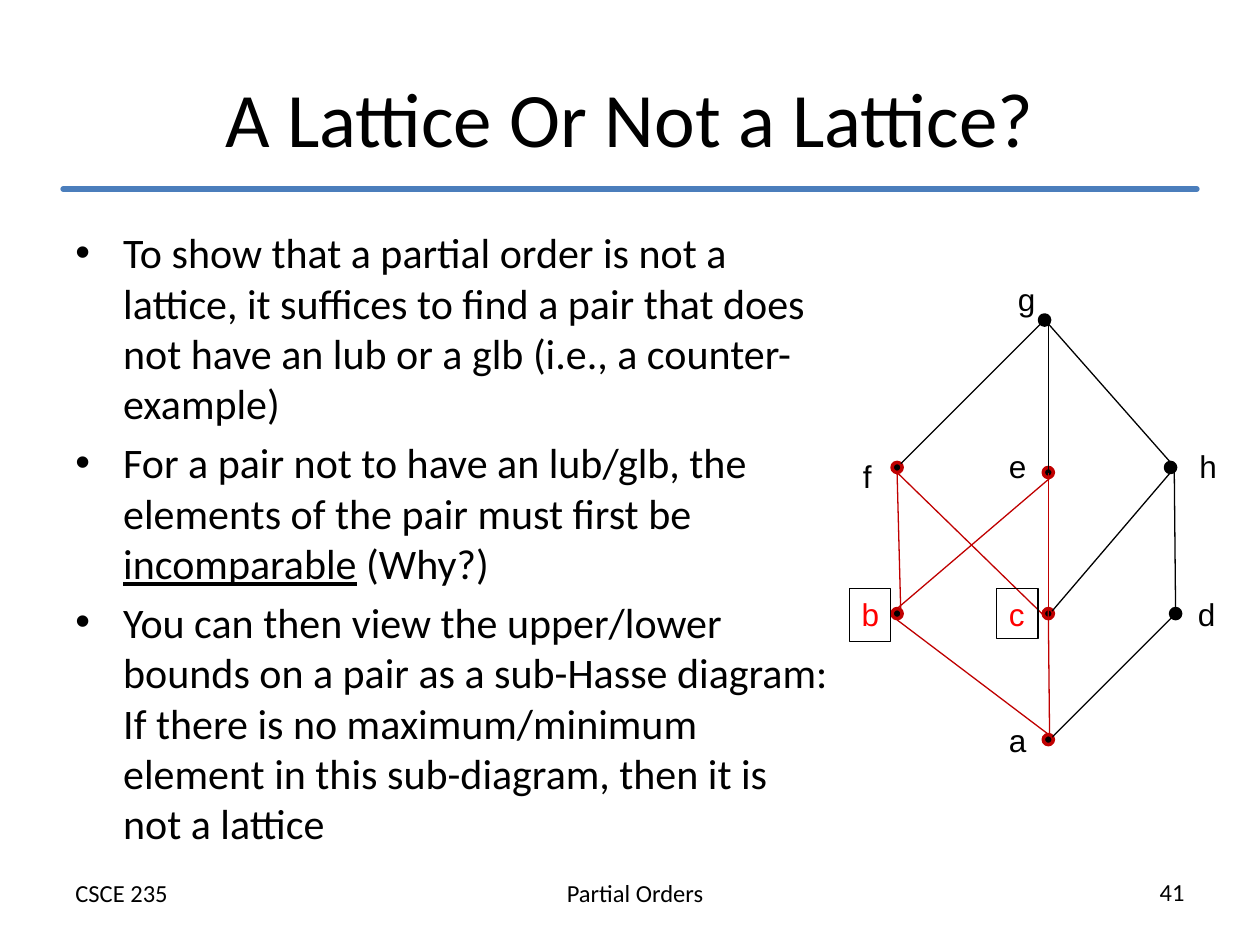
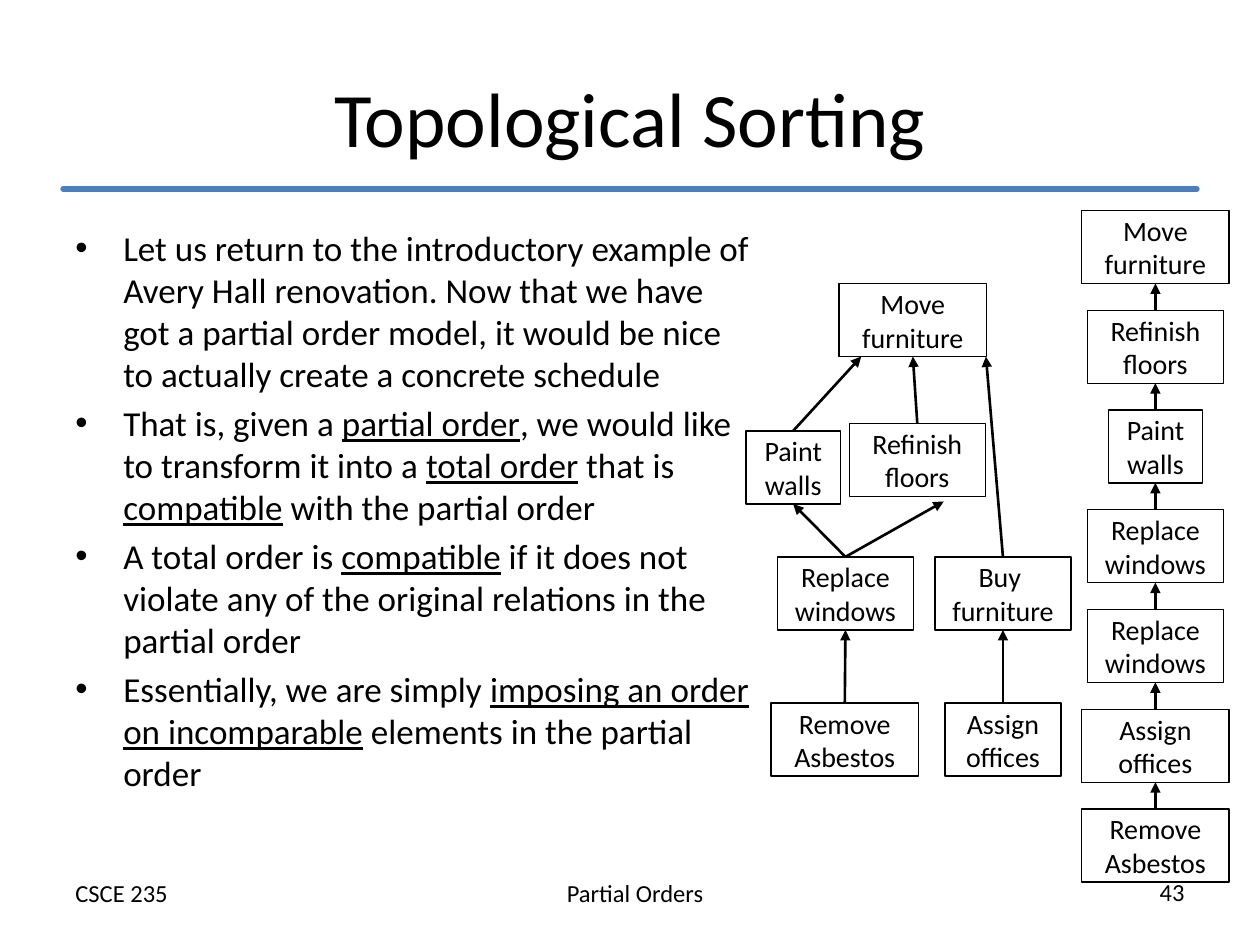
from lxml.etree import SubElement
from pptx import Presentation
from pptx.dml.color import RGBColor
from pptx.enum.shapes import MSO_CONNECTOR, MSO_SHAPE
from pptx.enum.text import MSO_ANCHOR, PP_ALIGN
from pptx.oxml.ns import qn
from pptx.util import Pt

PX = 9144  # 100 px to the inch
BLACK, RED, DARK_RED, BLUE = "000000", "FF0000", "C00000", "4B7EBC"
TASK_HEIGHT = 58

LATTICE_POINTS = [
    "To show that a partial order is not a lattice, it suffices to find a pair "
    "that does not have an lub or a glb (i.e., a counter-example)",
    "For a pair not to have an lub/glb, the elements of the pair must first be "
    "_incomparable_ (Why?)",
    "You can then view the upper/lower bounds on a pair as a sub-Hasse diagram: "
    "If there is no maximum/minimum element in this sub-diagram, then it is not a lattice",
]
SORTING_POINTS = [
    "Let us return to the introductory example of Avery Hall renovation. Now that we "
    "have got a partial order model, it would be nice to actually create a concrete schedule",
    "That is, given a _partial order_, we would like to transform it into a "
    "_total order_ that is _compatible_ with the partial order",
    "A total order is _compatible_ if it does not violate any of the original "
    "relations in the partial order",
    "Essentially, we are simply _imposing an order on incomparable_ elements "
    "in the partial order",
]

# Hasse diagram: dot left, top, outline colour
DOTS = [
    (708, 483, DARK_RED), (828, 371, DARK_RED), (929, 483, BLACK),
    (828, 483, DARK_RED), (828, 583, DARK_RED), (825, 250, BLACK),
    (708, 367, DARK_RED), (925, 367, BLACK),
]
LETTERS = [
    ("a", 791, 567, 34), ("d", 941, 467, 34), ("g", 798, 217, 34),
    ("h", 942, 350, 34), ("f", 675, 358, 27), ("e", 791, 350, 34),
]
FRAMED_LETTERS = [("b", 674, 467, 33, 42), ("c", 791, 467, 33, 40)]
BLACK_EDGES = [
    (835, 585, 930, 490), (929, 367, 832, 257), (826, 257, 715, 368),
    (832, 379, 832, 257), (933, 483, 932, 374), (835, 485, 929, 375),
]
RED_EDGES = [
    (835, 585, 712, 492), (832, 483, 832, 375), (833, 583, 832, 483),
    (715, 490, 712, 375), (712, 483, 835, 378), (828, 488, 712, 375),
]

# Partial order of tasks: left, top, width
TASKS = {
    "Remove Asbestos": (612, 558, 117),
    "Replace windows": (617, 442, 108),
    "Paint walls": (592, 342, 75),
    "Refinish floors": (674, 336, 108),
    "Move furniture": (666, 225, 117),
    "Buy \nfurniture": (742, 442, 108),
    "Assign offices": (750, 558, 92),
}
# Earlier task, later task, shift of the arrowhead from the bottom centre
PRECEDENCES = [
    ("Remove Asbestos", "Replace windows", 0, 0),
    ("Assign offices", "Buy \nfurniture", 0, 0),
    ("Refinish floors", "Move furniture", 0, 0),
    ("Replace windows", "Refinish floors", 21, 4),
    ("Replace windows", "Paint walls", 0, 0),
    ("Paint walls", "Move furniture", -41, 0),
    ("Buy \nfurniture", "Move furniture", 58, 0),
]
# Total order, last task first
SCHEDULE = [
    ("Move furniture", 117), ("Refinish floors", 108), ("Paint walls", 75),
    ("Replace windows", 108), ("Replace windows", 108),
    ("Assign offices", 117), ("Remove Asbestos", 117),
]


def color(value):
    return RGBColor.from_string(value)


def px(*lengths):
    return [round(length * PX) for length in lengths]


def style_text(box, size, ink=BLACK, font="Calibri", align=PP_ALIGN.LEFT,
               anchor=MSO_ANCHOR.TOP, wrap=True):
    frame = box.text_frame
    frame.word_wrap = wrap
    frame.vertical_anchor = anchor
    for para in frame.paragraphs:
        para.alignment = align
        for span in para.runs:
            span.font.size = Pt(size)
            span.font.name = font
            span.font.color.rgb = color(ink)


def add_text(page, text, left, top, width, height, size, **style):
    box = page.shapes.add_textbox(*px(left, top, width, height))
    box.text_frame.text = text
    style_text(box, size, **style)


def add_bullets(page, points, width, size):
    """Bulleted body; words between underscores are underlined."""
    box = page.shapes.add_textbox(*px(50, 175, width, 495))
    frame = box.text_frame
    for index, point in enumerate(points):
        para = frame.add_paragraph() if index else frame.paragraphs[0]
        para.space_before = Pt(size * 0.2)
        for part, words in enumerate(point.split("_")):
            span = para.add_run()
            span.text = words
            if part % 2:
                span.font.underline = True
        settings = para._p.get_or_add_pPr()
        indent = px(38)[0]
        settings.set("marL", str(indent))
        settings.set("indent", str(-indent))
        SubElement(settings, qn("a:buFont")).set("typeface", "Arial")
        SubElement(settings, qn("a:buChar")).set("char", "•")
    style_text(box, size)


def add_line(page, x1, y1, x2, y2, ink=BLACK, weight=0.75, arrow=False, cap=None):
    line = page.shapes.add_connector(MSO_CONNECTOR.STRAIGHT, *px(x1, y1, x2, y2))
    line.line.color.rgb = color(ink)
    line.line.width = Pt(weight)
    outline = line.line._get_or_add_ln()
    if cap:
        outline.set("cap", cap)
    if arrow:
        SubElement(outline, qn("a:tailEnd")).set("type", "triangle")
    SubElement(line._element.spPr, qn("a:effectLst"))


def add_outlined(page, kind, left, top, width, height, ink=BLACK, weight=0.75):
    shape = page.shapes.add_shape(kind, *px(left, top, width, height))
    shape.shadow.inherit = False
    shape.fill.background()
    shape.line.color.rgb = color(ink)
    shape.line.width = Pt(weight)
    return shape


def add_dot(page, left, top, ink):
    dot = add_outlined(page, MSO_SHAPE.OVAL, left, top, 8, 8, ink, 2)
    dot.fill.solid()
    dot.fill.fore_color.rgb = color(BLACK)


def add_framed_letter(page, letter, left, top, width, height):
    box = add_outlined(page, MSO_SHAPE.RECTANGLE, left, top, width, height)
    box.text_frame.text = letter
    style_text(box, 18, ink=RED, font="Arial", wrap=False)


def add_task(page, label, left, top, width):
    box = add_outlined(page, MSO_SHAPE.RECTANGLE, left, top, width, TASK_HEIGHT)
    box.text_frame.text = label
    style_text(box, 16, align=PP_ALIGN.CENTER, anchor=MSO_ANCHOR.MIDDLE)


def add_page(deck, title, number):
    """Blank page with the shared title, rule and footers."""
    page = deck.slides.add_slide(deck.slide_layouts[6])
    add_text(page, "Partial Orders", 358, 692, 292, 34, 14, align=PP_ALIGN.CENTER)
    add_text(page, "CSCE 235", 50, 692, 292, 34, 14)
    add_text(page, number, 658, 691, 292, 34, 14, align=PP_ALIGN.RIGHT)
    add_line(page, 50, 150, 950, 150, BLUE, 3, cap="rnd")
    add_text(page, title, 50, 30, 900, 125, 44,
             align=PP_ALIGN.CENTER, anchor=MSO_ANCHOR.MIDDLE)
    return page


def add_hasse_diagram(page):
    for dot in DOTS:
        add_dot(page, *dot)
    for edges, ink in ((BLACK_EDGES, BLACK), (RED_EDGES, DARK_RED)):
        for edge in edges:
            add_line(page, *edge, ink)
    for letter, left, top, width in LETTERS:
        add_text(page, letter, left, top, width, 40, 18, font="Arial", wrap=False)
    for framed in FRAMED_LETTERS:
        add_framed_letter(page, *framed)


def add_task_graph(page):
    for label, place in TASKS.items():
        add_task(page, label, *place)
    for earlier, later, shift_x, shift_y in PRECEDENCES:
        left, top, width = TASKS[earlier]
        end_left, end_top, end_width = TASKS[later]
        add_line(page, left + width / 2, top,
                 end_left + end_width / 2 + shift_x, end_top + TASK_HEIGHT + shift_y,
                 weight=1.5, arrow=True)


def add_schedule(page):
    center, first_top, last_top = 917, 167, 642
    pitch = (last_top - first_top) / (len(SCHEDULE) - 1)
    for index, (label, width) in enumerate(SCHEDULE):
        top = first_top + index * pitch
        add_task(page, label, center - width / 2, top, width)
        if index:
            add_line(page, center, top, center, top - pitch + TASK_HEIGHT,
                     weight=1.5, arrow=True)


def main():
    deck = Presentation()
    deck.slide_width, deck.slide_height = px(1000, 750)

    # Lattice counter-example
    page = add_page(deck, "A Lattice Or Not a Lattice?", "41")
    add_bullets(page, LATTICE_POINTS, 617, 24)
    add_hasse_diagram(page)

    # Partial order turned into a schedule
    page = add_page(deck, "Topological Sorting", "43")
    add_bullets(page, SORTING_POINTS, 558, 20)
    add_task_graph(page)
    add_schedule(page)

    deck.save("out.pptx")


if __name__ == "__main__":
    main()
